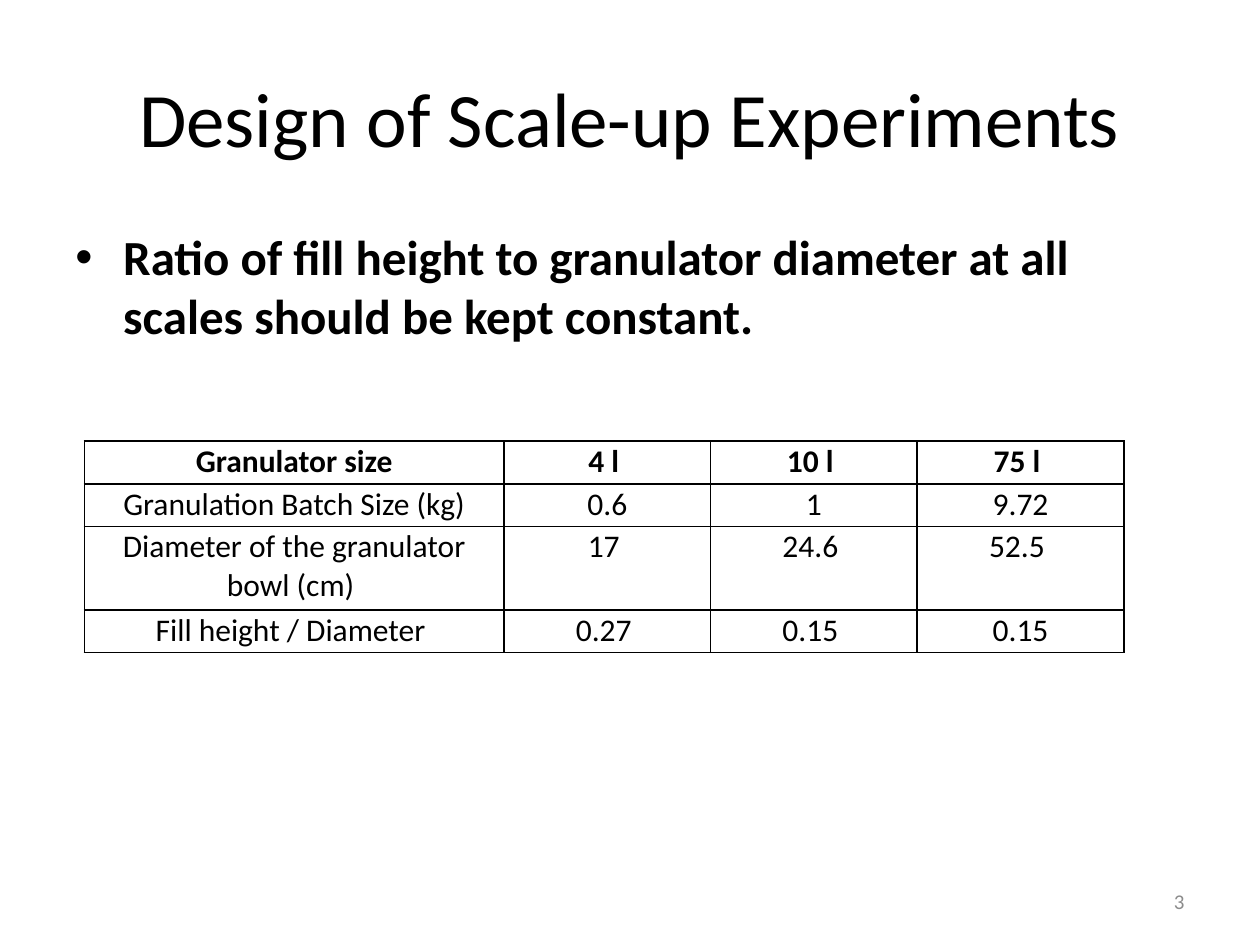
from lxml import etree
from pptx import Presentation
from pptx.dml.color import RGBColor
from pptx.enum import text
from pptx.oxml import ns
from pptx.util import Inches, Pt

BLACK = RGBColor(0x00, 0x00, 0x00)
GRAY = RGBColor(0x8C, 0x8C, 0x8C)
CENTER, RIGHT = text.PP_ALIGN.CENTER, text.PP_ALIGN.RIGHT
TOP, MIDDLE = text.MSO_ANCHOR.TOP, text.MSO_ANCHOR.MIDDLE


def write(frame, words, alignment, size, color=BLACK, bold=False):
    """Fill the frame's first paragraph with one formatted run and return it."""
    paragraph = frame.paragraphs[0]
    paragraph.alignment = alignment
    run = paragraph.add_run()
    run.text = words
    run.font.color.rgb = color
    for name, value in {"name": "Calibri", "size": Pt(size), "bold": bold}.items():
        setattr(run.font, name, value)
    return paragraph


def add_text(box, anchor, *content):
    frame = slide.shapes.add_textbox(*map(Inches, box)).text_frame
    frame.word_wrap = True
    frame.vertical_anchor = anchor
    return write(frame, *content)


presentation = Presentation()
presentation.slide_width, presentation.slide_height = Inches(10), Inches(7.5)
slide = presentation.slides.add_slide(presentation.slide_layouts[6])

add_text((0.5, 0.3, 9, 1.25), MIDDLE, "Design of Scale-up Experiments", CENTER, 44)

bullet = add_text(
    (0.5, 1.75, 9, 4.95), TOP,
    "Ratio of fill height to granulator diameter at all scales should be kept constant.",
    text.PP_ALIGN.LEFT, 28, BLACK, True)
bullet.space_before = Pt(5.6)
properties = bullet._p.get_or_add_pPr()
properties.set("marL", str(Inches(0.38)))
properties.set("indent", str(Inches(-0.38)))
etree.SubElement(properties, ns.qn("a:buFont"), typeface="Arial")
etree.SubElement(properties, ns.qn("a:buChar"), char="•")

add_text((7.17, 6.95, 2.33, 0.4), MIDDLE, "3", RIGHT, 12, GRAY)

ROWS = [
    ("Granulator size", "4 l ", "10 l ", "75 l "),
    ("Granulation Batch Size (kg)", "0.6", "1", "9.72"),
    ("Diameter of the granulator bowl (cm) ", "17 ", "24.6 ", "52.5 "),
    ("Fill height / Diameter ", "0.27 ", "0.15 ", "0.15"),
]
COLUMN_WIDTHS = [3.33, 1.64, 1.64, 1.64]
ROW_HEIGHTS = [0.34, 0.34, 0.66, 0.34]
CELL_FORMAT = {
    "margin_left": Inches(0.06), "margin_right": Inches(0.06),
    "margin_top": Inches(0.01), "margin_bottom": 0,
    "vertical_anchor": TOP,
}

table = slide.shapes.add_table(
    len(ROWS), len(COLUMN_WIDTHS), Inches(0.67), Inches(3.5),
    Inches(sum(COLUMN_WIDTHS)), Inches(sum(ROW_HEIGHTS))).table
table.horz_banding = False
for column, width in zip(table.columns, COLUMN_WIDTHS):
    column.width = Inches(width)
for row_index, (row, height, values) in enumerate(zip(table.rows, ROW_HEIGHTS, ROWS)):
    row.height = Inches(height)
    for cell, value in zip(row.cells, values):
        for name, setting in CELL_FORMAT.items():
            setattr(cell, name, setting)
        write(cell.text_frame, value, CENTER, 18, BLACK, row_index == 0)
        cell_properties = cell._tc.get_or_add_tcPr()
        for side in ("lnL", "lnR", "lnT", "lnB"):
            border = etree.SubElement(cell_properties, ns.qn(f"a:{side}"), w=str(Pt(1)))
            fill = etree.SubElement(border, ns.qn("a:solidFill"))
            etree.SubElement(fill, ns.qn("a:srgbClr"), val=str(BLACK))
        cell.fill.background()

presentation.save("out.pptx")
